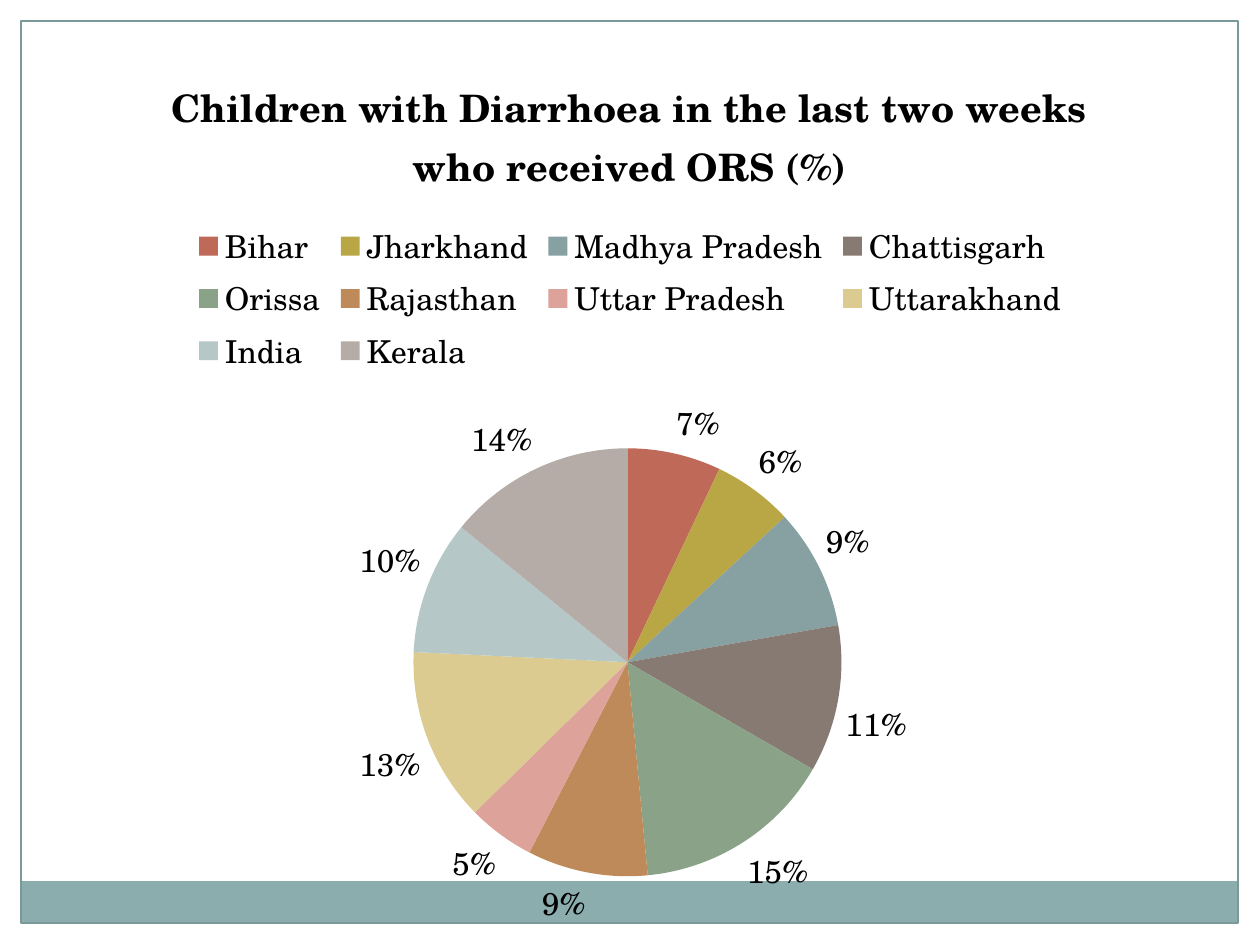
from lxml import etree
from pptx import Presentation
from pptx.chart.data import CategoryChartData
from pptx.dml.color import RGBColor
from pptx.enum.chart import XL_CHART_TYPE, XL_LABEL_POSITION, XL_LEGEND_POSITION
from pptx.enum.shapes import MSO_SHAPE
from pptx.oxml.ns import qn
from pptx.util import Emu, Pt

PIE = XL_CHART_TYPE.PIE
TOP = XL_LEGEND_POSITION.TOP
OUTSIDE = XL_LABEL_POSITION.OUTSIDE_END
RECT = MSO_SHAPE.RECTANGLE
SCALE = 914400 / 126
WIDE, HIGH = 1260, 945
FONT = "TeX Gyre Schola"
TITLE = "Children with Diarrhoea in the last two weeks who received ORS (%)"

# State, share and slice colour
STATES = [
    ("Bihar", 7, "BF6959"),
    ("Jharkhand", 6, "B9A745"),
    ("Madhya Pradesh", 9, "87A1A2"),
    ("Chattisgarh", 11, "877A72"),
    ("Orissa", 15, "8AA287"),
    ("Rajasthan", 9, "BE8A5A"),
    ("Uttar Pradesh", 5, "DDA29A"),
    ("Uttarakhand", 13, "DBCB91"),
    ("India", 10, "B5C7C7"),
    ("Kerala", 14, "B5ACA7"),
]


def color(code):
    return RGBColor.from_string(code)


def place(part, index, **modes):
    """Give a chart part a manual layout."""
    for old in part.findall(qn("c:layout")):
        part.remove(old)
    layout = etree.Element(qn("c:layout"))
    manual = etree.SubElement(layout, qn("c:manualLayout"))
    for name, val in modes.items():
        etree.SubElement(manual, qn("c:" + name)).set("val", str(val))
    part.insert(index, layout)


deck = Presentation()
deck.slide_width, deck.slide_height = Emu(int(WIDE * SCALE)), Emu(int(HIGH * SCALE))
slide = deck.slides.add_slide(deck.slide_layouts[6])

# White margins, bottom band and thin frame
for left, top, width, height, fill, line in [
    (0, 0, WIDE, 21, "FFFFFF", None),
    (1239, 0, 21, HIGH, "FFFFFF", None),
    (0, 0, 21, HIGH, "FFFFFF", None),
    (21, 881, 1217, 43, "8CADAE", None),
    (21, 21, 1217, 902, None, "7C999A"),
]:
    box = slide.shapes.add_shape(
        RECT, *[Emu(int(n * SCALE)) for n in (left, top, width, height)])
    box.shadow.inherit = False
    if fill:
        box.fill.solid()
        box.fill.fore_color.rgb = color(fill)
    else:
        box.fill.background()
    if line:
        box.line.color.rgb = color(line)
        box.line.width = Pt(0.75)
    else:
        box.line.fill.background()

# Pie chart
data = CategoryChartData()
data.categories = [name for name, share, code in STATES]
data.add_series(TITLE, [share for name, share, code in STATES])
frame = slide.shapes.add_chart(
    PIE, *[Emu(int(n * SCALE)) for n in (0, 42, WIDE, 903)], data)
chart = frame.chart
chart.font.name = FONT
chart.font.size = Pt(18)
chart.font.color.rgb = color("000000")

# Title
chart.has_title = True
title = chart.chart_title
title.text_frame.text = TITLE
font = title.text_frame.paragraphs[0].runs[0].font
font.name = FONT
font.size = Pt(21.6)
font.bold = True
font.color.rgb = color("000000")

# Legend
chart.has_legend = True
chart.legend.position = TOP
chart.legend.include_in_layout = False

# Slices and percentages
plot = chart.plots[0]
plot.vary_by_categories = True
for i, (name, share, code) in enumerate(STATES):
    fill = plot.series[0].points[i].format.fill
    fill.solid()
    fill.fore_color.rgb = color(code)
plot.has_data_labels = True
labels = plot.data_labels
labels.show_value = False
labels.show_percentage = True
labels.number_format = "0%"
labels.number_format_is_linked = False
labels.position = OUTSIDE

# Room for the pie, as shares of the chart
area = chart._chartSpace.chart.plotArea
place(area, 0, layoutTarget="inner", xMode="edge", yMode="edge",
      x=0.328, y=0.45, w=0.34, h=0.474)

deck.save("out.pptx")
